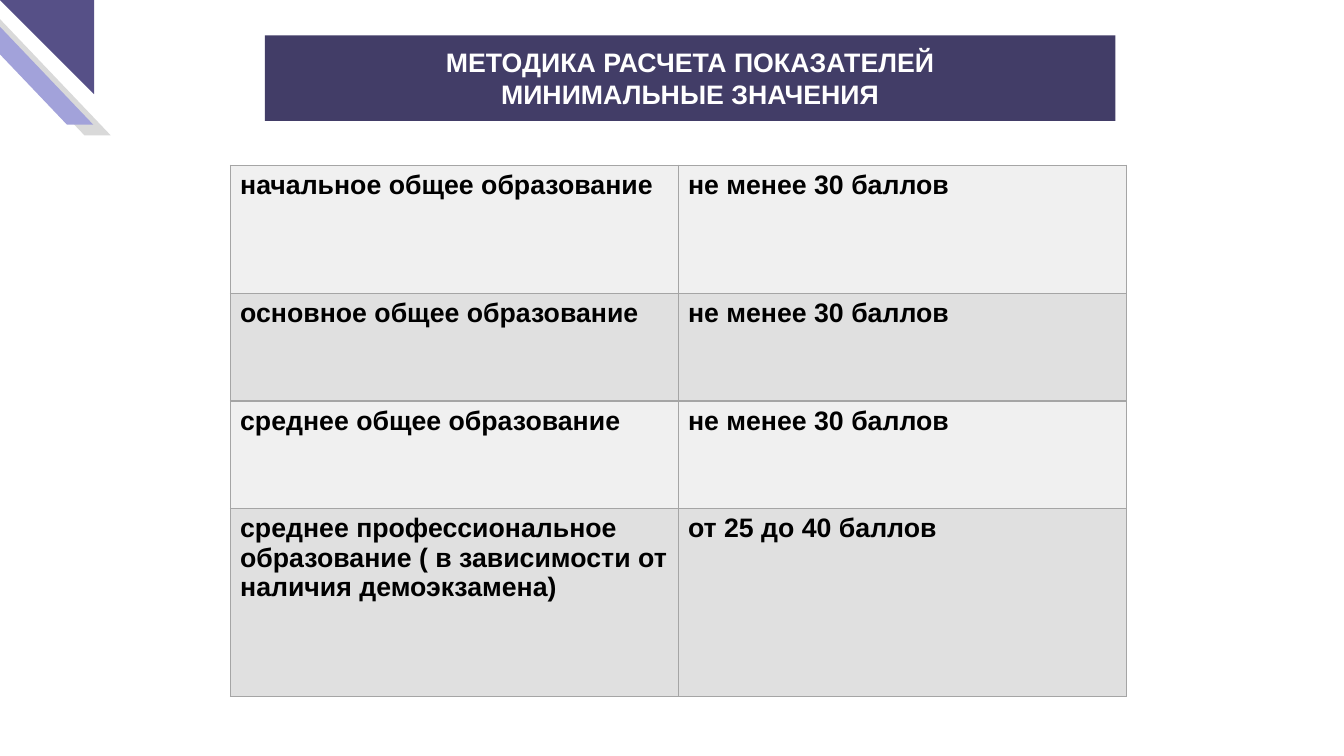
"""Builds a slide with the minimum scores by level of education."""
from dataclasses import dataclass

from lxml import etree
from pptx import Presentation
from pptx.dml.color import RGBColor
from pptx.enum.shapes import MSO_SHAPE
from pptx.enum.text import MSO_ANCHOR, PP_ALIGN
from pptx.oxml.ns import qn
from pptx.util import Cm, Pt

PARALLELOGRAM = MSO_SHAPE.PARALLELOGRAM
RIGHT_TRIANGLE = MSO_SHAPE.RIGHT_TRIANGLE
RECTANGLE = MSO_SHAPE.RECTANGLE
MIDDLE = MSO_ANCHOR.MIDDLE
LEFT, CENTER = PP_ALIGN.LEFT, PP_ALIGN.CENTER

BORDER_COLOR = "A5A5A5"
BORDER_WIDTH = Pt(0.96)
ROW_FILLS = ("F0F0F0", "E0E0E0")
COLUMN_WIDTH = 11.85
TITLE = ("МЕТОДИКА РАСЧЕТА ПОКАЗАТЕЛЕЙ", "МИНИМАЛЬНЫЕ ЗНАЧЕНИЯ")


@dataclass
class Block:
    """A filled shape, with its lengths in centimetres."""
    kind: int
    left: float
    top: float
    width: float
    height: float
    fill: str
    flips: tuple = ()
    adjustment: float | None = None


@dataclass
class ScoreRow:
    """A table row with a level of education and its minimum score."""
    level: str
    score: str
    height: float


CORNER = (
    Block(PARALLELOGRAM, -0.91, 0.28, 3.84, 3.3, "D9D9D9", ("flipH",), 0.953),
    Block(PARALLELOGRAM, -1.37, 0, 3.84, 3.3, "A2A2DA", ("flipH",), 0.953),
    Block(RIGHT_TRIANGLE, 0, 0, 2.49, 2.49, "565087", ("flipH", "flipV")),
)
BANNER = Block(RECTANGLE, 7.01, 0.94, 22.5, 2.26, "423D67")
SCORES = (
    ScoreRow("начальное общее образование", "не менее 30 баллов", 3.4),
    ScoreRow("основное общее образование", "не менее 30 баллов", 2.84),
    ScoreRow("среднее общее образование", "не менее 30 баллов", 2.84),
    ScoreRow("среднее профессиональное образование ( в зависимости от наличия демоэкзамена)",
             "от 25 до 40 баллов", 4.98),
)


def color(value: str) -> RGBColor:
    """Turn a hex string into a colour."""
    return RGBColor.from_string(value)


def write(text_frame, *lines: str, font_color: str = "000000", size: float = 20,
          bold: bool = True, align: int = LEFT) -> None:
    """Write each line as a paragraph with the given format."""
    text_frame.word_wrap = True
    for index, line in enumerate(lines):
        paragraph = text_frame.add_paragraph() if index else text_frame.paragraphs[0]
        paragraph.alignment = align
        run = paragraph.add_run()
        run.text = line
        run.font.name = "Arial"
        run.font.size = Pt(size)
        run.font.bold = bold
        run.font.color.rgb = color(font_color)


def draw_block(slide, block: Block):
    """Draw a filled shape without line or shadow."""
    shape = slide.shapes.add_shape(block.kind, Cm(block.left), Cm(block.top),
                                   Cm(block.width), Cm(block.height))
    shape.shadow.inherit = False
    shape.fill.solid()
    shape.fill.fore_color.rgb = color(block.fill)
    shape.line.fill.background()
    if block.adjustment is not None:
        shape.adjustments[0] = block.adjustment
    for flip in block.flips:
        shape._element.spPr.xfrm.set(flip, "1")
    return shape


def draw_banner(slide) -> None:
    """Draw the title banner."""
    text_frame = draw_block(slide, BANNER).text_frame
    text_frame.margin_left = text_frame.margin_right = 0
    text_frame.margin_top = text_frame.margin_bottom = Cm(0.2)
    text_frame.vertical_anchor = MIDDLE
    write(text_frame, *TITLE, font_color="FFFFFF", align=CENTER)


def set_borders(cell) -> None:
    """Put the same line on all four sides of a cell."""
    properties = cell._tc.get_or_add_tcPr()
    for index, side in enumerate(("lnL", "lnR", "lnT", "lnB")):
        line = etree.Element(qn(f"a:{side}"), w=str(int(BORDER_WIDTH)))
        fill = etree.SubElement(line, qn("a:solidFill"))
        etree.SubElement(fill, qn("a:srgbClr"), val=BORDER_COLOR)
        properties.insert(index, line)


def draw_scores(slide) -> None:
    """Draw the table of minimum scores."""
    height = sum(row.height for row in SCORES)
    table = slide.shapes.add_table(len(SCORES), 2, Cm(6.1), Cm(4.37),
                                   Cm(2 * COLUMN_WIDTH), Cm(height)).table
    table.first_row = False
    table.horz_banding = False
    for column in table.columns:
        column.width = Cm(COLUMN_WIDTH)
    for row_index, row in enumerate(SCORES):
        table.rows[row_index].height = Cm(row.height)
        for column_index, text in enumerate((row.level, row.score)):
            cell = table.cell(row_index, column_index)
            cell.fill.solid()
            cell.fill.fore_color.rgb = color(ROW_FILLS[row_index % 2])
            set_borders(cell)
            write(cell.text_frame, text)


def main() -> None:
    """Build and save the presentation."""
    presentation = Presentation()
    presentation.slide_width = Cm(35.56)
    presentation.slide_height = Cm(20)
    slide = presentation.slides.add_slide(presentation.slide_layouts[6])
    for block in CORNER:
        draw_block(slide, block)
    draw_banner(slide)
    draw_scores(slide)
    presentation.save("out.pptx")


if __name__ == "__main__":
    main()
